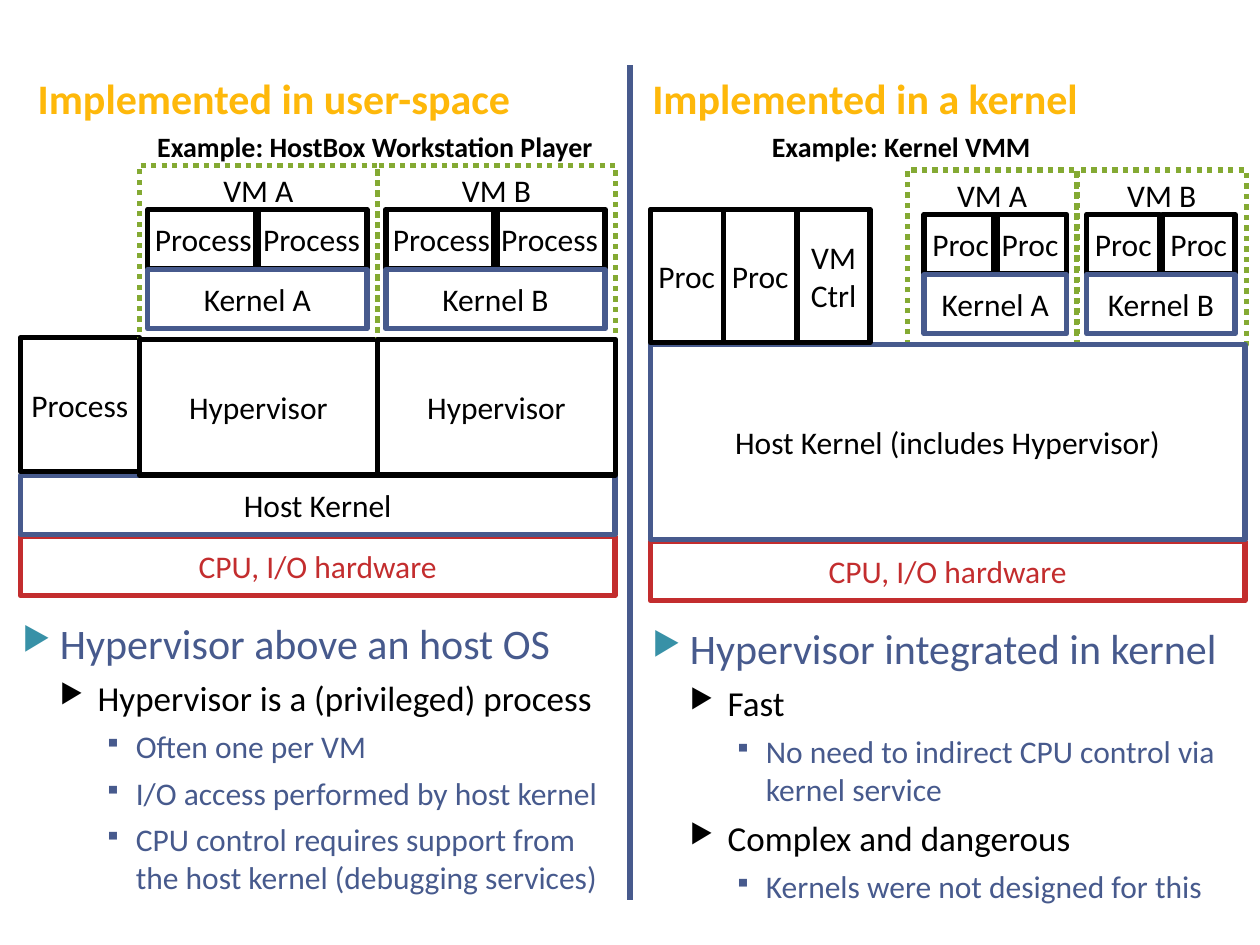
from lxml import etree
from pptx import Presentation
from pptx.dml.color import RGBColor
from pptx.enum.dml import MSO_LINE
from pptx.enum.shapes import MSO_CONNECTOR, MSO_SHAPE
from pptx.enum.text import MSO_ANCHOR, PP_ALIGN
from pptx.oxml.ns import qn
from pptx.util import Cm, Pt

RECTANGLE = MSO_SHAPE.RECTANGLE
STRAIGHT = MSO_CONNECTOR.STRAIGHT
DOTTED = MSO_LINE.ROUND_DOT
TOP, MIDDLE, BOTTOM = MSO_ANCHOR.TOP, MSO_ANCHOR.MIDDLE, MSO_ANCHOR.BOTTOM
CENTER = PP_ALIGN.CENTER

BLACK = RGBColor(0x00, 0x00, 0x00)
BLUE = RGBColor(0x47, 0x5A, 0x8D)
GREEN = RGBColor(0x84, 0xAA, 0x33)
RED = RGBColor(0xC3, 0x2D, 0x2E)
ORANGE = RGBColor(0xFE, 0xB8, 0x0A)
TEAL = RGBColor(0x38, 0x91, 0xA7)
FONT = "Calibri"

# Diagram measures in cm, rows counted from the top of the diagram
WIDTH = 11.99
VM_HEIGHT = 3.51
PROCESS_TOP = 0.89
KERNEL_TOP = 2.11
LAYER_HEIGHT = 1.19
HARDWARE_TOP = 7.49
TALL_HEIGHT = 2.69

# Bullet levels: margin, hanging indent (cm), space before, size (pt), bullet, bullet colour, text colour
LEVELS = [
    (0.76, 0.76, 6, 24, "▶", TEAL, BLUE),
    (1.52, 0.76, 5, 20, "▶", BLACK, BLACK),
    (2.29, 0.64, 5, 18, "▪", BLUE, BLUE),
]


def set_font(paragraph, size, color, bold=False):
    font = paragraph.font
    font.name, font.size, font.bold = FONT, Pt(size), bold
    font.color.rgb = color


def set_indent(paragraph, margin, first_line):
    properties = paragraph._p.get_or_add_pPr()
    properties.set("marL", str(Cm(margin)))
    properties.set("indent", str(Cm(first_line)))
    return properties


def add_box(slide, text, left, top, width, height, line_color=BLACK,
            text_color=BLACK, anchor=MIDDLE, dash=None):
    shape = slide.shapes.add_shape(RECTANGLE, Cm(left), Cm(top), Cm(width), Cm(height))
    shape.shadow.inherit = False
    shape.fill.background()
    shape.line.color.rgb = line_color
    shape.line.width = Pt(3)
    if dash is not None:
        shape.line.dash_style = dash
    frame = shape.text_frame
    frame.word_wrap = True
    frame.vertical_anchor = anchor
    frame.margin_left = frame.margin_right = Cm(0.1)
    paragraph = frame.paragraphs[0]
    paragraph.text = text
    paragraph.alignment = CENTER
    set_font(paragraph, 18, text_color)


def add_text_frame(slide, left, top, width, height, anchor=TOP):
    box = slide.shapes.add_textbox(Cm(left), Cm(top), Cm(width), Cm(height))
    box.text_frame.word_wrap = True
    box.text_frame.vertical_anchor = anchor
    return box.text_frame


def add_heading(slide, left, top, width, title, example):
    frame = add_text_frame(slide, left, top, width, 1.9, BOTTOM)
    heading = frame.paragraphs[0]
    heading.text = title
    heading.space_before = Pt(6)
    set_font(heading, 24, ORANGE, bold=True)
    subheading = frame.add_paragraph()
    subheading.text = example
    subheading.space_before = Pt(4)
    set_indent(subheading, 3.05, -0.64)
    set_font(subheading, 16, BLACK, bold=True)


def add_bullets(slide, left, top, items):
    frame = add_text_frame(slide, left, top, 12.19, 5.69)
    for index, (level, text) in enumerate(items):
        margin, hanging, space, size, bullet, bullet_color, color = LEVELS[level]
        paragraph = frame.add_paragraph() if index else frame.paragraphs[0]
        paragraph.text = text
        paragraph.level = level
        paragraph.space_before = Pt(space)
        set_font(paragraph, size, color)
        properties = set_indent(paragraph, margin, -hanging)
        marks = [
            etree.Element(qn("a:buClr")),
            etree.Element(qn("a:buSzPct"), val="76000"),
            etree.Element(qn("a:buChar"), char=bullet),
        ]
        etree.SubElement(marks[0], qn("a:srgbClr"), val=str(bullet_color))
        # Bullet marks follow the spacing and come before the default run properties
        position = list(properties).index(properties.find(qn("a:defRPr")))
        properties[position:position] = marks


def add_vm(slide, left, top, width, letter, process, inset, pitch, process_width):
    """Dotted virtual machine with two processes over its own kernel."""
    add_box(slide, f"VM {letter}", left, top, width, VM_HEIGHT, GREEN, anchor=TOP, dash=DOTTED)
    for index in range(2):
        add_box(slide, process, left + inset + index * pitch, top + PROCESS_TOP,
                process_width, LAYER_HEIGHT)
    add_box(slide, f"Kernel {letter}", left + inset, top + KERNEL_TOP,
            pitch + process_width, LAYER_HEIGHT, BLUE)


def add_hardware(slide, left, top):
    add_box(slide, "CPU, I/O hardware", left, top + HARDWARE_TOP, WIDTH, LAYER_HEIGHT, RED, RED)


def add_user_space_diagram(slide, left, top):
    process_width, vm_width = 2.4, 4.8
    add_hardware(slide, left, top)
    add_box(slide, "Host Kernel", left, top + 6.25, WIDTH, LAYER_HEIGHT, BLUE)
    add_box(slide, "Process", left, top + 3.48, process_width, TALL_HEIGHT)
    for index, letter in enumerate("AB"):
        vm_left = left + process_width + index * vm_width
        add_vm(slide, vm_left, top, vm_width, letter, "Process", 0.17, 2.18, 2.24)
        add_box(slide, "Hypervisor", vm_left, top + VM_HEIGHT, vm_width, 2.74)


def add_kernel_diagram(slide, left, top):
    vm_left, vm_width = left + 5.18, 3.42
    add_vm(slide, vm_left, top, vm_width, "A", "Proc", 0.34, 1.4, 1.47)
    add_vm(slide, vm_left + vm_width, top, vm_width, "B", "Proc", 0.2, 1.52, 1.47)
    add_hardware(slide, left, top)
    add_box(slide, "Host Kernel (includes Hypervisor)", left, top + VM_HEIGHT, WIDTH, 3.94, BLUE)
    for index, text in enumerate(["Proc", "Proc", "VM Ctrl"]):
        add_box(slide, text, left + index * 1.48, top + 0.79, 1.47, TALL_HEIGHT)


def add_divider(slide, left, top, bottom):
    divider = slide.shapes.add_connector(STRAIGHT, Cm(left), Cm(top), Cm(left), Cm(bottom))
    divider.line.color.rgb = BLUE
    divider.line.width = Pt(4)
    etree.SubElement(divider._element.spPr, qn("a:effectLst"))


def main():
    presentation = Presentation()
    presentation.slide_width, presentation.slide_height = Cm(25.4), Cm(19.05)
    slide = presentation.slides.add_slide(presentation.slide_layouts[6])
    add_divider(slide, 12.7, 1.32, 18.14)

    # Left half: hypervisor in user space
    add_heading(slide, 0.51, 1.52, 12.01, "Implemented in user-space",
                "Example: HostBox Workstation Player")
    add_user_space_diagram(slide, 0.41, 3.33)
    add_bullets(slide, 0.2, 12.32, [
        (0, "Hypervisor above an host OS"),
        (1, "Hypervisor is a (privileged) process"),
        (2, "Often one per VM"),
        (2, "I/O access performed by host kernel"),
        (2, "CPU control requires support from the host kernel (debugging services)"),
    ])

    # Right half: hypervisor in the kernel
    add_heading(slide, 12.9, 1.52, 12.19, "Implemented in a kernel", "Example: Kernel VMM")
    add_kernel_diagram(slide, 13.11, 3.43)
    add_bullets(slide, 12.9, 12.42, [
        (0, "Hypervisor integrated in kernel"),
        (1, "Fast"),
        (2, "No need to indirect CPU control via kernel service"),
        (1, "Complex and dangerous"),
        (2, "Kernels were not designed for this"),
    ])
    presentation.save("out.pptx")


if __name__ == "__main__":
    main()
